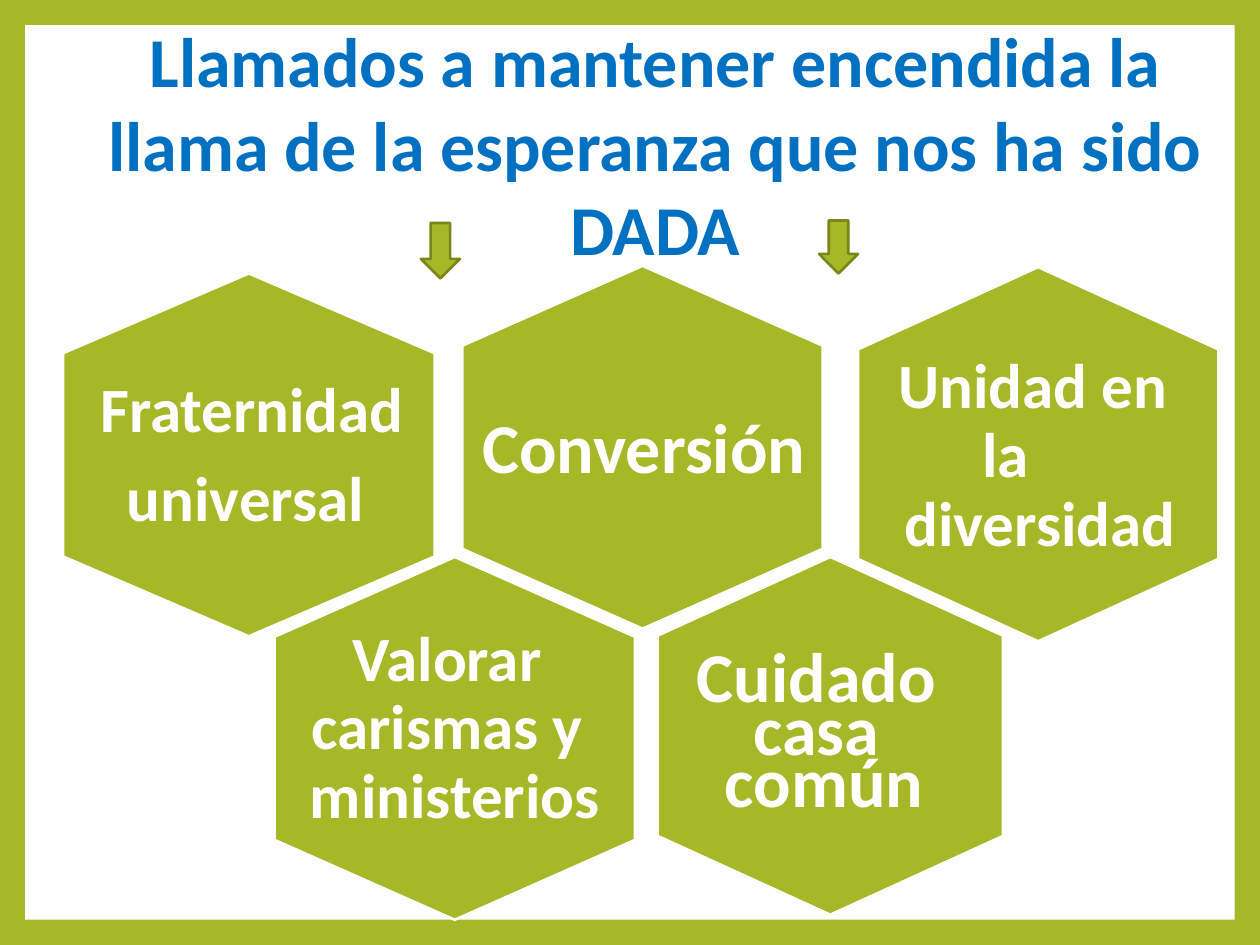
from pptx import Presentation
from pptx.dml.color import RGBColor
from pptx.enum.shapes import MSO_SHAPE as Shape
from pptx.enum.text import MSO_ANCHOR as Anchor, PP_ALIGN as Align
from pptx.util import Inches, Pt

COLUMNS, ROWS = 100, 75
SLIDE_WIDTH, SLIDE_HEIGHT = Inches(10), Inches(7.5)
GREEN = RGBColor(0xA6, 0xB7, 0x27)
DARK_GREEN = RGBColor(0x79, 0x86, 0x1A)
BLUE = RGBColor(0x00, 0x70, 0xC0)
WHITE = RGBColor(0xFF, 0xFF, 0xFF)
SHOULDER = 0.22
LABEL_WIDTH = 30

TITLE = "Llamados a mantener encendida la llama de la esperanza que nos ha sido DADA"
CALLS = [
    dict(cell=(5, 21.7, 29.5, 28.8), center=19.5, top=28.3, size=36, leading=50.6,
         lines=[("Fraternidad", 1), ("universal", 0)]),
    dict(cell=(52.2, 44.2, 27.4, 28.4), center=64.8, top=52.7, size=40, leading=30,
         lines=[("Cuidado", 0), ("casa", 0), ("común", 1.2)]),
    dict(cell=(68.1, 21.2, 28.6, 29.7), center=79.8, top=28, size=36, leading=39.3,
         lines=[("Unidad en", 4.4), ("la", 0), ("diversidad", 5.5)]),
    dict(cell=(36.7, 21.1, 28.6, 28.8), center=51.1, top=31.9, size=40, leading=48.8,
         lines=[("Conversión", 0)]),
    dict(cell=(21.8, 44.2, 28.6, 28.8), center=35.5, top=49.6, size=36, leading=39.3,
         lines=[("Valorar", 0), ("carismas y", 0), ("ministerios", 1.2)]),
]
ARROWS = [(65, 17.5, 3.1, 4.2), (33.4, 17.7, 3.1, 4.4)]


def across(columns):
    return round(SLIDE_WIDTH * columns / COLUMNS)


def down(rows):
    return round(SLIDE_HEIGHT * rows / ROWS)


def place(cell):
    left, top, width, height = cell
    return across(left), down(top), across(width), down(height)


def paint(shape, fill, line=None):
    shape.shadow.inherit = False
    shape.fill.solid()
    shape.fill.fore_color.rgb = fill
    if line is None:
        shape.line.fill.background()
    else:
        shape.line.color.rgb = line
        shape.line.width = Pt(1.5)


def add_preset(page, kind, cell, fill, line=None):
    paint(page.shapes.add_shape(kind, *place(cell)), fill, line)


def add_hexagon(page, cell):
    left, top, width, height = place(cell)
    shares = [(1, SHOULDER), (1, 1 - SHOULDER), (0.5, 1), (0, 1 - SHOULDER), (0, SHOULDER)]
    corners = [(left + round(width * x), top + round(height * y)) for x, y in shares]
    builder = page.shapes.build_freeform(left + width // 2, top)
    builder.add_line_segments(corners, close=True)
    paint(builder.convert_to_shape(), GREEN, WHITE)


def add_text(page, cell, lines, *, size, leading, color):
    frame = page.shapes.add_textbox(*place(cell)).text_frame
    frame.word_wrap = True
    frame.vertical_anchor = Anchor.TOP
    frame.margin_left = frame.margin_right = frame.margin_top = frame.margin_bottom = 0
    for index, (text, indent) in enumerate(lines):
        para = frame.paragraphs[0] if index == 0 else frame.add_paragraph()
        para.alignment = Align.CENTER
        para.line_spacing = Pt(leading)
        if indent:
            para._p.get_or_add_pPr().set("marL", str(across(indent)))
        span = para.add_run()
        span.text = text
        span.font.name = "Calibri"
        span.font.size = Pt(size)
        span.font.bold = True
        span.font.color.rgb = color


def add_call(page, cell, center, top, lines, size, leading):
    add_hexagon(page, cell)
    height = len(lines) * leading / 7.2
    add_text(page, (center - LABEL_WIDTH / 2, top, LABEL_WIDTH, height), lines,
             size=size, leading=leading, color=WHITE)


def main():
    deck = Presentation()
    deck.slide_width, deck.slide_height = SLIDE_WIDTH, SLIDE_HEIGHT
    page = deck.slides.add_slide(deck.slide_layouts[6])
    add_preset(page, Shape.RECTANGLE, (0, 0, COLUMNS, ROWS), GREEN)
    add_preset(page, Shape.RECTANGLE, (2, 2, COLUMNS - 4, ROWS - 4), WHITE)
    for call in CALLS:
        add_call(page, **call)
    for cell in ARROWS:
        add_preset(page, Shape.DOWN_ARROW, cell, GREEN, DARK_GREEN)
    add_text(page, (6, 1.4, 92, 20), [(TITLE, 0)], size=40, leading=48, color=BLUE)
    deck.save("out.pptx")


if __name__ == "__main__":
    main()
